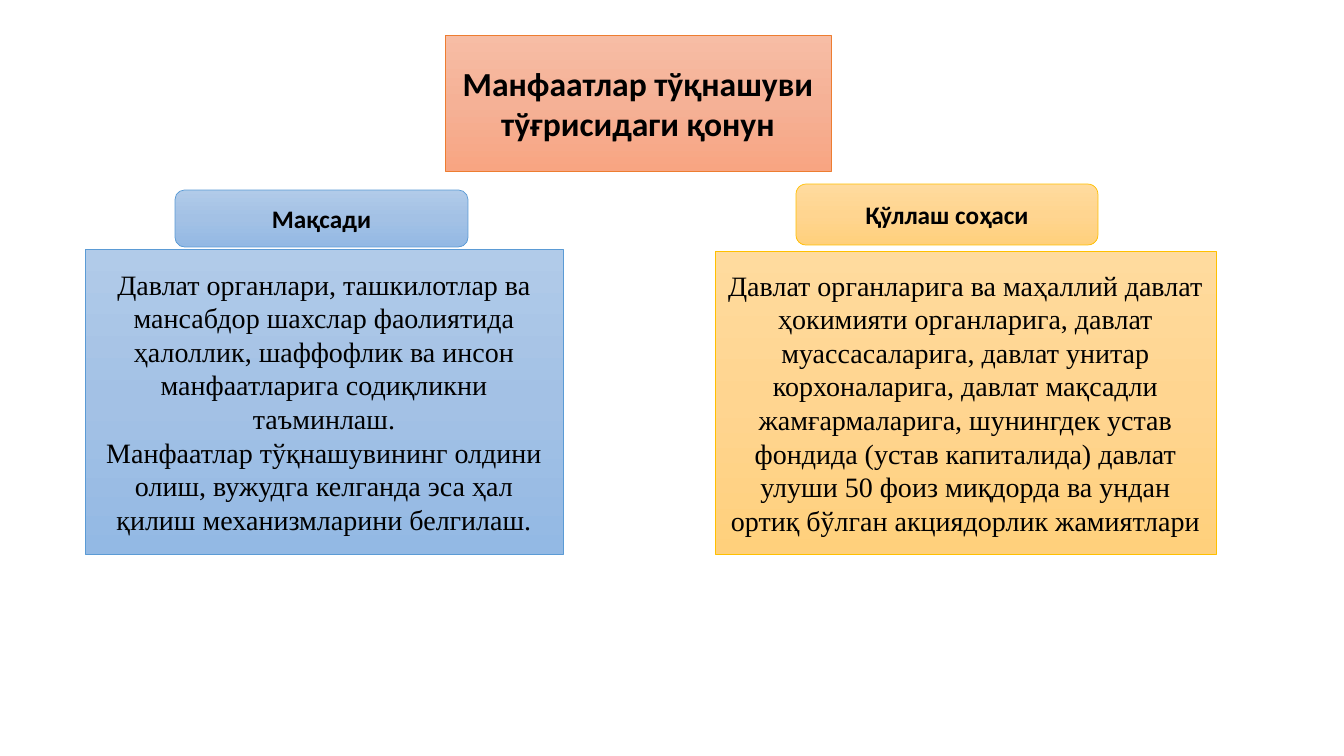
from copy import deepcopy

from lxml import etree
from pptx import Presentation
from pptx.dml.color import RGBColor
from pptx.enum.shapes import MSO_SHAPE
from pptx.enum.text import MSO_ANCHOR, MSO_AUTO_SIZE, PP_ALIGN
from pptx.oxml.ns import qn
from pptx.util import Pt

RECTANGLE = MSO_SHAPE.RECTANGLE
ROUNDED = MSO_SHAPE.ROUNDED_RECTANGLE
CENTER = PP_ALIGN.CENTER
MIDDLE = MSO_ANCHOR.MIDDLE
FIXED_SIZE = MSO_AUTO_SIZE.NONE

PX = 914400 / 100.8
COLORS = {
    "text": "000000",
    "orange": ("F7BDA5", "F5B196", "F8A582"),
    "orange line": "ED7D31",
    "blue": ("B1CBE9", "A3C1E5", "93B9E4"),
    "blue line": "5B9BD5",
    "gold": ("FFDB9E", "FFD590", "FFD07C"),
    "gold line": "FFC000",
}


def emu(*pixels):
    return [round(value * PX) for value in pixels]


def style_box(box, color, text, font, size, bold):
    """Give a box its vertical gradient, outline and centred text."""
    box.shadow.inherit = False
    box.fill.gradient()
    box.fill.gradient_angle = 270
    stop_list = box.element.spPr.find(".//" + qn("a:gsLst"))
    stop_list.insert(1, deepcopy(stop_list[0]))
    stop_list[1].set("pos", "50000")
    for stop, shade in zip(box.fill.gradient_stops, COLORS[color]):
        stop.color.rgb = RGBColor.from_string(shade)
    box.line.color.rgb = RGBColor.from_string(COLORS[color + " line"])
    box.line.width = Pt(0.5)

    frame = box.text_frame
    frame.text = text
    frame.word_wrap = True
    frame.auto_size = FIXED_SIZE
    frame.vertical_anchor = MIDDLE
    for para in frame.paragraphs:
        para.alignment = CENTER
        for span in para.runs:
            span.font.name = font
            span.font.size = Pt(size)
            span.font.bold = bold
            span.font.color.rgb = RGBColor.from_string(COLORS["text"])


deck = Presentation()
deck.slide_width, deck.slide_height = emu(1344, 756)
page = deck.slides.add_slide(deck.slide_layouts[5])

title = page.shapes.title
title.left, title.top, title.width, title.height = emu(445, 35, 386, 136)
outline = etree.SubElement(title.element.spPr, qn("a:prstGeom"), prst="roundRect")
etree.SubElement(outline, qn("a:avLst"))
style_box(title, "orange", "Манфаатлар тўқнашуви тўғрисидаги қонун", "Calibri", 24, True)

PURPOSE = (
    "Давлат органлари, ташкилотлар ва мансабдор шахслар фаолиятида ҳалоллик, "
    "шаффофлик ва инсон манфаатларига содиқликни таъминлаш.\n"
    "Манфаатлар тўқнашувининг олдини олиш, вужудга келганда эса ҳал қилиш "
    "механизмларини белгилаш."
)
SCOPE = (
    "Давлат органларига ва маҳаллий давлат ҳокимияти органларига, давлат "
    "муассасаларига, давлат унитар корхоналарига, давлат мақсадли "
    "жамғармаларига, шунингдек устав фондида (устав капиталида) давлат улуши "
    "50 фоиз миқдорда ва ундан ортиқ бўлган акциядорлик жамиятлари"
)
columns = [
    ("gold", SCOPE, (715, 251, 501, 303), "Қўллаш соҳаси", (796, 184, 302, 61)),
    ("blue", PURPOSE, (85, 249, 478, 305), "Мақсади", (175, 190, 293, 57)),
]
for color, body, body_place, heading, heading_place in columns:
    body_box = page.shapes.add_shape(RECTANGLE, *emu(*body_place))
    style_box(body_box, color, body, "Times New Roman", 20, False)
    heading_box = page.shapes.add_shape(ROUNDED, *emu(*heading_place))
    style_box(heading_box, color, heading, "Calibri", 18, True)

deck.save("out.pptx")
